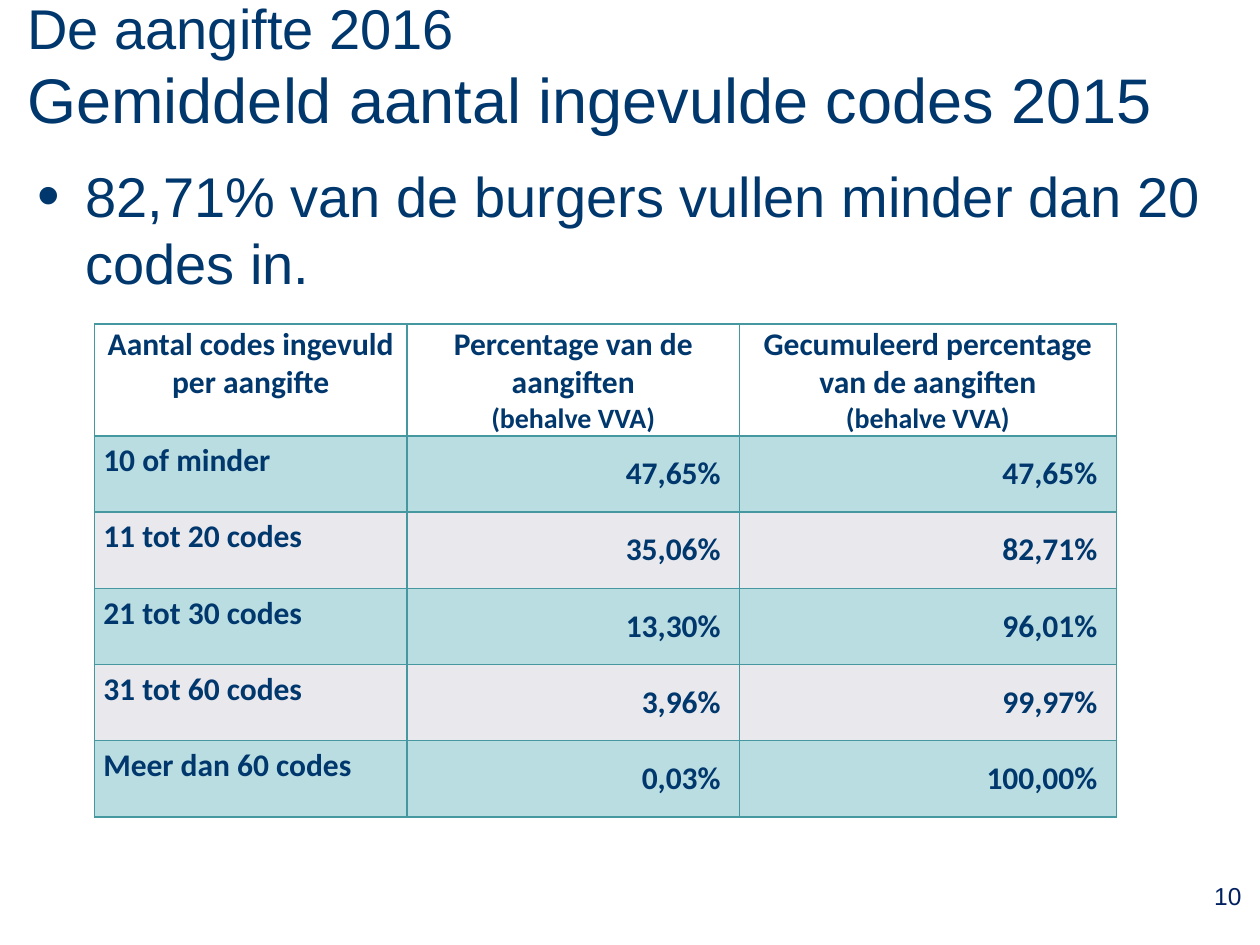
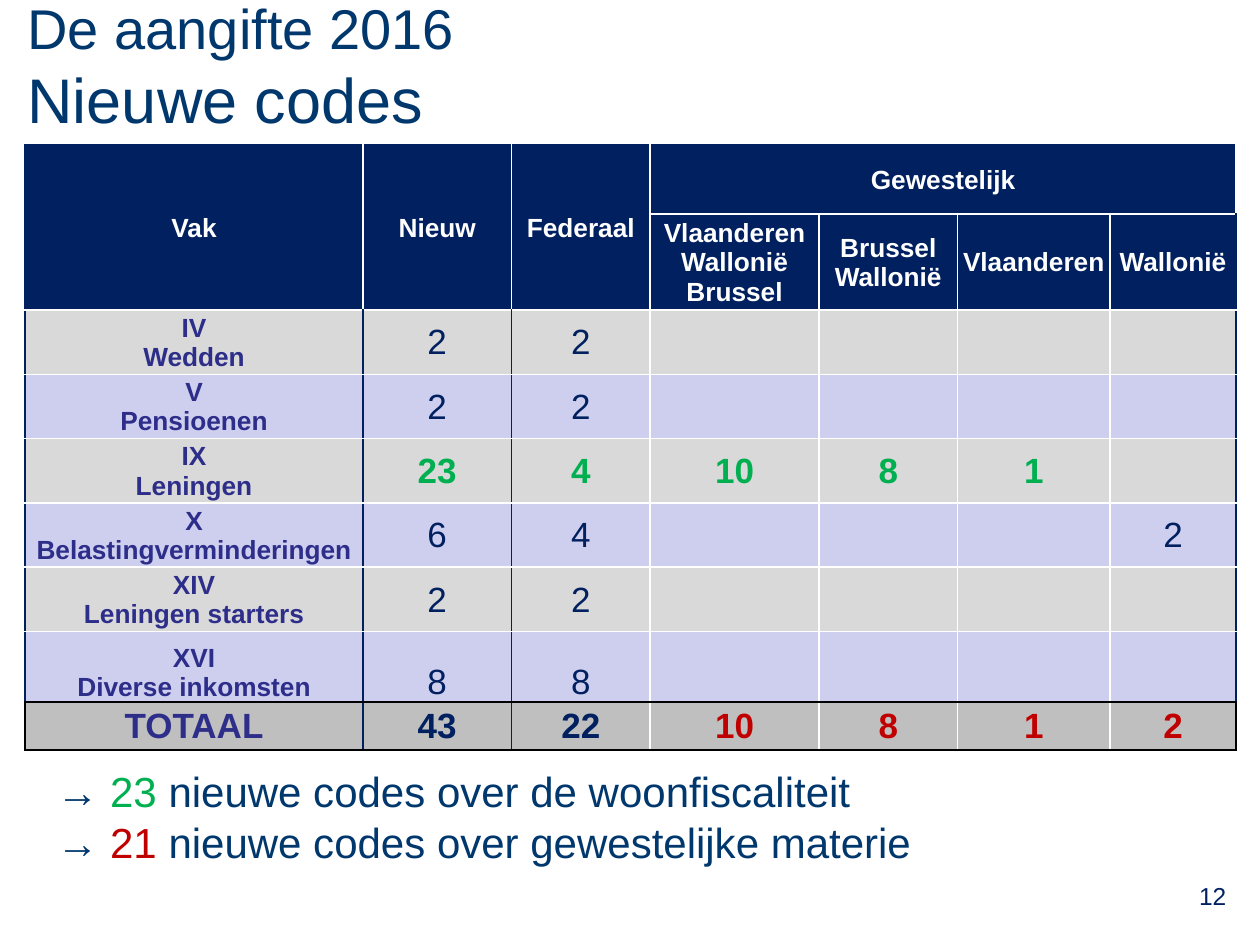
from lxml.etree import SubElement as Sub
from pptx import Presentation
from pptx.dml.color import RGBColor
from pptx.enum.text import MSO_ANCHOR as Anchor, PP_ALIGN as Align
from pptx.oxml.ns import qn
from pptx.util import Inches, Pt

hue = RGBColor.from_string
INK, NAVY, WHITE, BLACK = "00376D", "002060", "FFFFFF", "000000"
GREEN, RED, PLUM, TEAL = "00B050", "C00000", "2D2D8A", "4597A0"
GREY, LILAC, DARK, AQUA, PALE = "D9D9D9", "CECEEF", "BFBFBF", "BADDE1", "E8E8ED"

deck = Presentation()
deck.slide_width, deck.slide_height = Inches(10), Inches(7.5)
UNIT = deck.slide_width / 100


def style(para, size, ink, bold=False, align=Align.LEFT, face="Arial"):
    para.alignment = align
    font = para.font
    font.name, font.size, font.bold = face, Pt(size), bold
    font.color.rgb = hue(ink)


def dress(cell, fill, edges, pads, anchor):
    props = cell._tc.get_or_add_tcPr()
    for side, (ink, width) in zip("LRTB", edges):
        line = Sub(props, qn(f"a:ln{side}"), w=str(Pt(width)))
        Sub(Sub(line, qn("a:solidFill")), qn("a:srgbClr"), val=ink)
    cell.fill.solid()
    cell.fill.fore_color.rgb = hue(fill)
    cell.vertical_anchor = anchor
    cell.margin_left, cell.margin_top, cell.margin_right, cell.margin_bottom = map(Inches, pads)


pages = [
    ("Gemiddeld aantal ingevulde codes 2015", "10", 93.7,
     (7.5, 25.7), [24.8, 26.4, 29.9], [8.9] + [6.05] * 5),
    ("Nieuwe codes", "12", 92.5,
     (2, 11.5), [26.8, 11.8, 11, 13.4, 11, 12.1, 10],
     [5.5, 7.6] + [5.1] * 5 + [5.6, 3.8]),
]
slides, grids = [], []
for title, num, left, spot, cols, rows in pages:
    slide = deck.slides.add_slide(deck.slide_layouts[6])
    slides.append(slide)
    area = [int(n * UNIT) for n in (1.2, 1.1, 93.7, 8.1)]
    frame = slide.shapes.add_textbox(*area).text_frame
    frame.word_wrap, frame.vertical_anchor = True, Anchor.MIDDLE
    para = frame.paragraphs[0]
    style(para, 36, INK)
    head = para.add_run()
    head.text, head.font.size = "De aangifte 2016", Pt(32)
    para.add_line_break()
    para.add_run().text = title

    area = [int(n * UNIT) for n in (left, 69.4, 7.5, 5.2)]
    frame = slide.shapes.add_textbox(*area).text_frame
    frame.word_wrap = True
    frame.text = num
    style(frame.paragraphs[0], 14, NAVY, align=Align.CENTER)

    area = [int(n * UNIT) for n in (*spot, sum(cols), sum(rows))]
    grid = slide.shapes.add_table(len(rows), len(cols), *area).table
    grid.first_row = grid.horz_banding = False
    for col, width in zip(grid.columns, cols):
        col.width = int(width * UNIT)
    for row, height in zip(grid.rows, rows):
        row.height = int(height * UNIT)
    grids.append(grid)

area = [int(n * UNIT) for n in (2, 12.3, 96.1, 56.7)]
frame = slides[0].shapes.add_textbox(*area).text_frame
frame.word_wrap = True
frame.text = "82,71% van de burgers vullen minder dan 20 codes in."
para = frame.paragraphs[0]
props = para._p.get_or_add_pPr()
props.set("marL", str(Inches(0.38)))
props.set("indent", str(-Inches(0.38)))
Sub(Sub(props, qn("a:buClr")), qn("a:srgbClr"), val=INK)
Sub(props, qn("a:buSzPct"), val="115000")
Sub(props, qn("a:buFont"), typeface="Arial")
Sub(props, qn("a:buChar"), char="•")
style(para, 32, INK)

shares = [
    ("Aantal codes ingevuld per aangifte",
     "Percentage van de aangiften\n(behalve VVA)",
     "Gecumuleerd percentage van de aangiften\n(behalve VVA)"),
    ("10 of minder", "47,65%", "47,65%"),
    ("11 tot 20 codes", "35,06%", "82,71%"),
    ("21 tot 30 codes", "13,30%", "96,01%"),
    ("31 tot 60 codes", "3,96%", "99,97%"),
    ("Meer dan 60 codes", "0,03%", "100,00%"),
]
TIGHT = (0.01, 0.01, 0.01, 0)
for r, row in enumerate(shares):
    for c, text in enumerate(row):
        cell = grids[0].cell(r, c)
        cell.text = text
        if r == 0:
            fill, pads, anchor, align = WHITE, TIGHT, Anchor.TOP, Align.CENTER
        else:
            fill = AQUA if r % 2 else PALE
            pads, anchor, align = [0.15] * 4, Anchor.BOTTOM, Align.RIGHT
            if c == 0:
                pads, anchor, align = (0.07, 0, 0.07, 0), Anchor.TOP, Align.LEFT
                cell.text_frame.paragraphs[0].line_spacing = 1.15
        dress(cell, fill, [(TEAL, 1)] * 4, pads, anchor)
        for i, para in enumerate(cell.text_frame.paragraphs):
            style(para, 16 if i else 18, INK, True, align, "Calibri")

codes = [
    ("Vak", "Nieuw", "Federaal", "Gewestelijk", "", "", ""),
    ("", "", "", "Vlaanderen\nWallonië\nBrussel", "Brussel Wallonië", "Vlaanderen", "Wallonië"),
    ("IV\nWedden", "2", "2", "", "", "", ""),
    ("V\nPensioenen", "2", "2", "", "", "", ""),
    ("IX\nLeningen", "23", "4", "10", "8", "1", ""),
    ("X\nBelastingverminderingen", "6", "4", "", "", "", "2"),
    ("XIV\nLeningen starters", "2", "2", "", "", "", ""),
    ("XVI\nDiverse inkomsten", "8", "8", "", "", "", ""),
    ("TOTAAL", "43", "22", "10", "8", "1", "2"),
]
grid = grids[1]
for c in range(3):
    grid.cell(0, c).merge(grid.cell(1, c))
grid.cell(0, 3).merge(grid.cell(0, 6))
LAST, END = len(codes) - 1, len(codes[0]) - 1
for r, row in enumerate(codes):
    top, total = r < 2, r == LAST
    fill = NAVY if top else DARK if total else LILAC if r % 2 else GREY
    rim = BLACK if total else NAVY
    for c, text in enumerate(row):
        cell = grid.cell(r, c)
        west = rim if c == 0 else NAVY if c < 3 and not top else WHITE
        east = rim if c == END else NAVY if c < 2 and not top else WHITE
        north = NAVY if r == 0 else BLACK if total else WHITE
        south = BLACK if r >= LAST - 1 else WHITE
        edges = [(west, 1), (east, 1), (north, 1.5 if r in (1, 2) else 1),
                 (south, 1.5 if top else 1)]
        dress(cell, fill, edges, TIGHT, Anchor.BOTTOM if r == LAST - 1 else Anchor.MIDDLE)
        if not text:
            continue
        cell.text = text
        ink = (WHITE if top else PLUM if c == 0 else GREEN if r == 4
               else RED if total and c > 2 else NAVY)
        size = 15 if top or (c == 0 and not total) else 20
        for para in cell.text_frame.paragraphs:
            style(para, size, ink, top or total or c == 0 or r == 4, Align.CENTER)

area = [int(n * UNIT) for n in (3.5, 60.3, 88.2, 9)]
frame = slides[1].shapes.add_textbox(*area).text_frame
frame.word_wrap = True
notes = [("23", GREEN, "nieuwe codes over de woonfiscaliteit"),
         ("21", RED, "nieuwe codes over gewestelijke materie")]
for i, (count, ink, text) in enumerate(notes):
    para = frame.add_paragraph() if i else frame.paragraphs[0]
    style(para, 24, INK)
    for part in ("→ ", count, f" {text}"):
        run = para.add_run()
        run.text = part
        if part == count:
            run.font.color.rgb = hue(ink)

deck.save("out.pptx")
